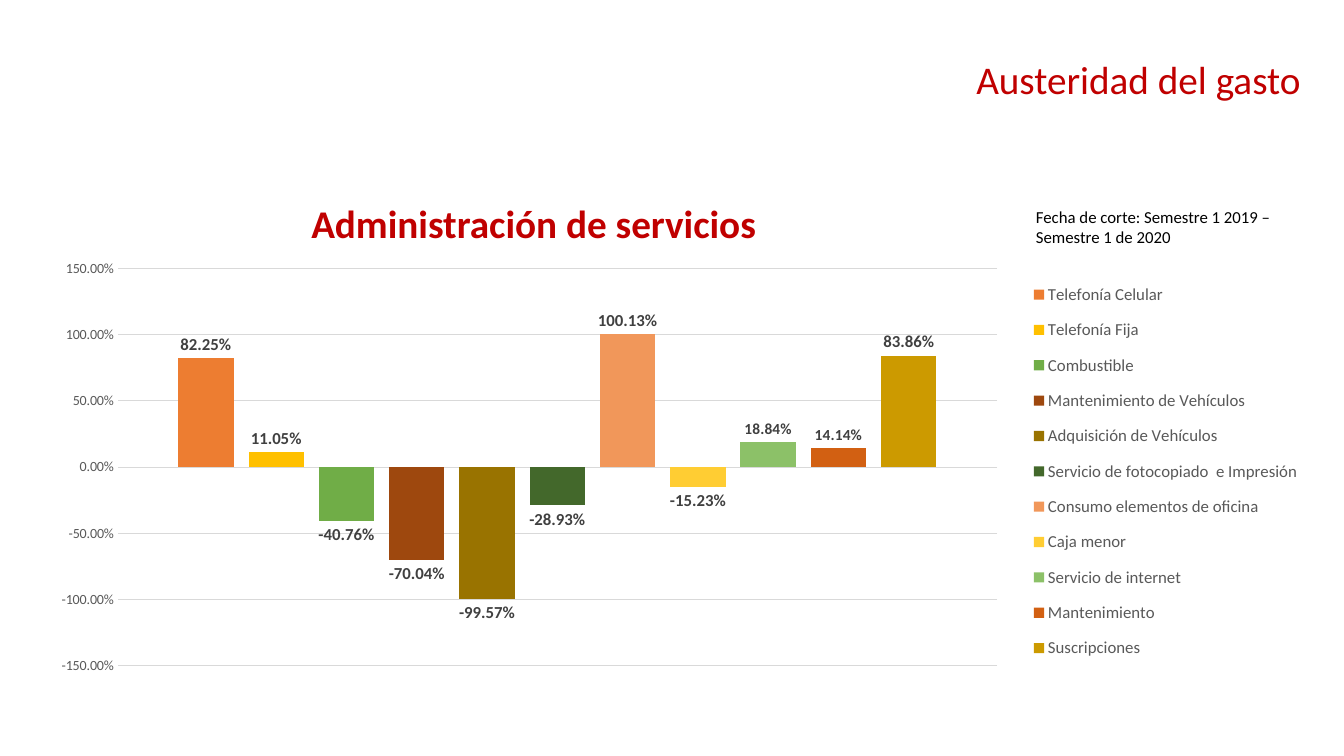
from lxml import etree
from pptx import Presentation
from pptx.chart.data import CategoryChartData
from pptx.dml.color import RGBColor
from pptx.enum.chart import XL_CHART_TYPE as Kind, XL_LABEL_POSITION as Place
from pptx.enum.chart import XL_LEGEND_POSITION as Side, XL_TICK_MARK as Tick
from pptx.enum.text import MSO_AUTO_SIZE as Fit, PP_ALIGN as Align
from pptx.oxml.ns import qn
from pptx.util import Pt

FONT = "Calibri"
FORMAT = "0.00%"
COLORS = {"red": "C00000", "black": "000000", "label": "404040",
          "axis": "595959", "grid": "D9D9D9"}

# name, value, fill, label size
COSTS = [
    ("Telefonía Celular", 0.8225, "ED7D31", 12),
    ("Telefonía Fija", 0.1105, "FFC000", 12),
    ("Combustible ", -0.4076, "70AD47", 12),
    ("Mantenimiento de Vehículos", -0.7004, "9E480E", 12),
    ("Adquisición de Vehículos", -0.9957, "997300", 12),
    ("Servicio de fotocopiado  e Impresión", -0.2893, "43682B", 12),
    ("Consumo elementos de oficina", 1.0013, "F1975A", 12),
    ("Caja menor", -0.1523, "FFCD33", 12),
    ("Servicio de internet", 0.1884, "8CC168", 11),
    ("Mantenimiento ", 0.1414, "D26012", 11),
    ("Suscripciones", 0.8386, "CC9A00", 12),
]


def style(font, size, color, bold=False):
    font.name, font.size, font.bold = FONT, Pt(size), bold
    font.color.rgb = RGBColor.from_string(COLORS[color])


def add_text(slide, box, text, size, color, bold=False, align=Align.LEFT,
             wrap=True, fit=Fit.SHAPE_TO_FIT_TEXT):
    frame = slide.shapes.add_textbox(*map(Pt, box)).text_frame
    frame.word_wrap, frame.auto_size = wrap, fit
    para = frame.paragraphs[0]
    para.text, para.alignment = text, align
    style(para.font, size, color, bold)
    return frame


def add_layout(after, x, y, w, h, inner=False):
    """Pin a chart part, as fractions of the chart, behind the given element."""
    parent = after.getparent()
    for old in parent.findall(qn("c:layout")):
        parent.remove(old)
    layout = etree.Element(qn("c:layout"))
    manual = etree.SubElement(layout, qn("c:manualLayout"))
    parts = [("layoutTarget", "inner")] if inner else []
    parts += [("xMode", "edge"), ("yMode", "edge"),
              ("x", x), ("y", y), ("w", w), ("h", h)]
    for tag, val in parts:
        etree.SubElement(manual, qn("c:" + tag)).set("val", str(val))
    after.addnext(layout)


def style_axes(chart):
    chart.category_axis.visible = False
    axis = chart.value_axis
    axis.minimum_scale, axis.maximum_scale, axis.major_unit = -1.5, 1.5, 0.5
    axis.major_tick_mark = axis.minor_tick_mark = Tick.NONE
    axis.format.line.fill.background()
    grid = axis.major_gridlines.format.line
    grid.width = Pt(0.75)
    grid.color.rgb = RGBColor.from_string(COLORS["grid"])
    ticks = axis.tick_labels
    ticks.number_format, ticks.number_format_is_linked = FORMAT, False
    style(ticks.font, 10, "axis")


def style_bars(plot):
    plot.gap_width, plot.overlap, plot.vary_by_categories = 219, -27, False
    for bar, (_, _, fill, size) in zip(plot.series, COSTS):
        bar.invert_if_negative = False
        bar.format.fill.solid()
        bar.format.fill.fore_color.rgb = RGBColor.from_string(fill)
        labels = bar.data_labels
        labels.show_value, labels.position = True, Place.OUTSIDE_END
        labels.number_format, labels.number_format_is_linked = FORMAT, False
        style(labels.font, size, "label", True)


def add_costs(slide, box):
    data = CategoryChartData(number_format=FORMAT)
    data.categories = ["1"]
    for name, value, _, _ in COSTS:
        data.add_series(name, [value])
    chart = slide.shapes.add_chart(
        Kind.COLUMN_CLUSTERED, *map(Pt, box), data).chart
    chart.has_title = False
    style(chart.font, 12, "black", True)
    style_axes(chart)
    style_bars(chart.plots[0])

    chart.has_legend = True
    legend = chart.legend
    legend.position, legend.include_in_layout = Side.RIGHT, False
    style(legend.font, 12, "axis")
    root = chart.element
    add_layout(root.find(".//" + qn("c:legendPos")), 0.78, 0.04, 0.22, 0.94)

    area = root.find(".//" + qn("c:plotArea"))
    for old in area.findall(qn("c:layout")):
        area.remove(old)
    first = etree.Element(qn("c:layout"))
    area.insert(0, first)
    add_layout(first, 0.111, 0.03, 0.634, 0.913, inner=True)


def add_report(slide, box):
    """Place the chart with its heading and cut-off date above it."""
    left, top, width, height = box
    add_text(slide, (left + 189.4, top - 41, 335.5, 41),
             "Administración de servicios", 28, "red", True, wrap=False)
    add_costs(slide, box)
    add_text(slide, (left + 707, top - 36, 188, 36),
             "Fecha de corte: Semestre 1 2019 – Semestre 1 de 2020",
             12, "black")


def add_title(slide, box):
    frame = add_text(slide, box, "Austeridad del gasto", 28, "red",
                     align=Align.RIGHT, fit=Fit.NONE)
    frame.margin_top = frame.margin_bottom = Pt(7.2)


def main():
    deck = Presentation()
    deck.slide_width, deck.slide_height = Pt(960), Pt(540)
    slide = deck.slides.add_slide(deck.slide_layouts[6])
    add_report(slide, (25.9, 180, 906.5, 307.4))
    add_title(slide, (361.4, 32.4, 574.6, 46))
    deck.save("out.pptx")


if __name__ == "__main__":
    main()
